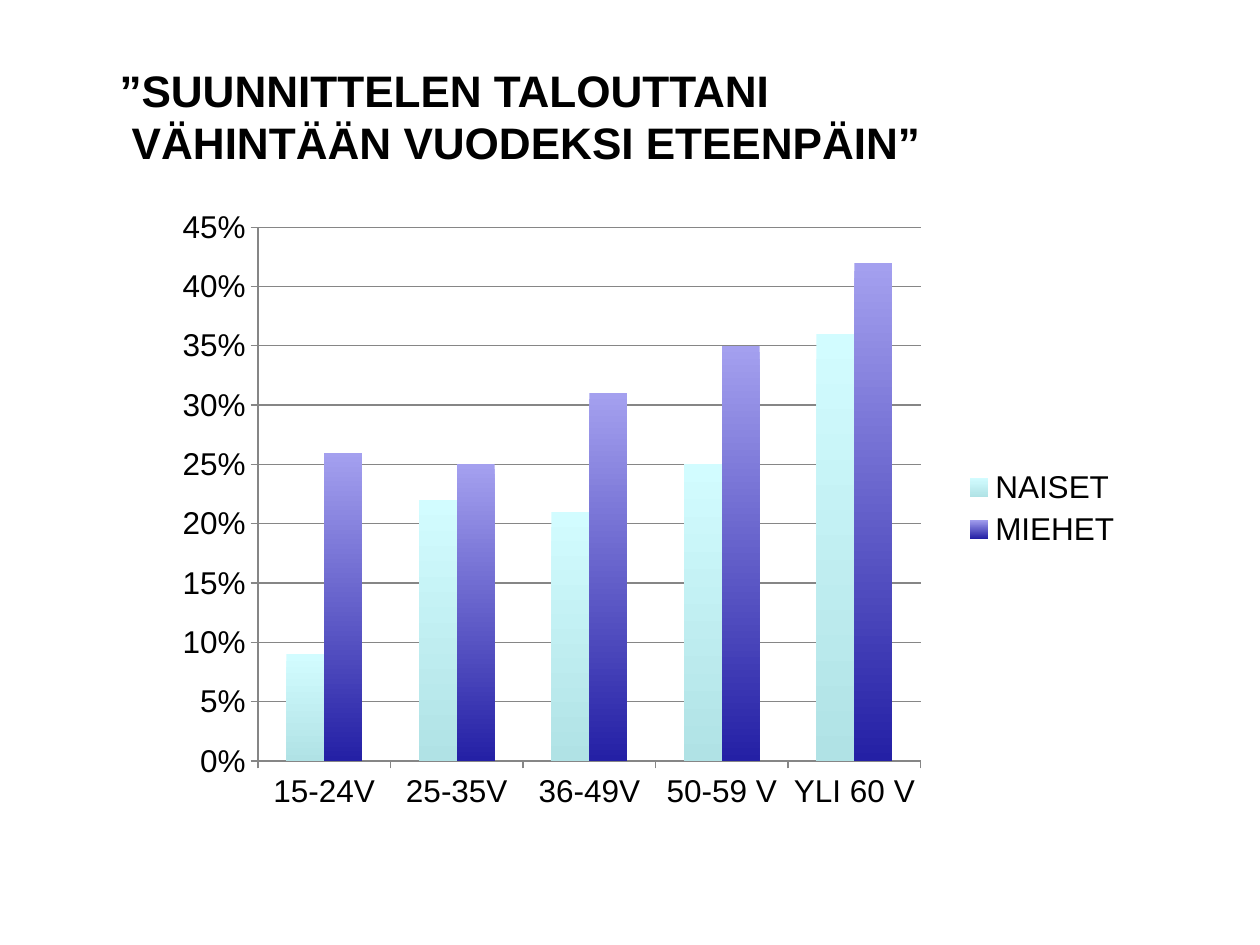
from lxml import etree
from pptx import Presentation
from pptx.chart.data import CategoryChartData as Data
from pptx.dml.color import RGBColor as Rgb
from pptx.enum.chart import XL_CHART_TYPE as Kind, XL_LEGEND_POSITION as Side, XL_TICK_MARK as Tick
from pptx.enum.text import MSO_ANCHOR as Anchor
from pptx.util import Inches, Pt

TITLE = ["”SUUNNITTELEN TALOUTTANI", " VÄHINTÄÄN VUODEKSI ETEENPÄIN”"]
AGES = ["15-24V", "25-35V", "36-49V", "50-59 V", "YLI 60 V"]
SERIES = [
    ("NAISET", (0.09, 0.22, 0.21, 0.25, 0.36), ("D2FCFF", "B0E2E5")),
    ("MIEHET", (0.26, 0.25, 0.31, 0.35, 0.42), ("A4A0EF", "2420A5")),
]
PLOT = {"x": 0.133, "y": 0.065, "w": 0.655, "h": 0.826}
GREY = "868686"
NS = "http://schemas.openxmlformats.org/drawingml/2006/chart"


def paint(color, code):
    color.rgb = Rgb.from_string(code)


def style(font, size):
    font.name = "Arial"
    font.size = Pt(size)
    paint(font.color, "000000")


def rule(line):
    line.width = Pt(0.75)
    paint(line.color, GREY)


def add_title(slide):
    box = slide.shapes.add_textbox(Inches(0.85), Inches(0.42), Inches(7.25), Inches(0.83))
    frame = box.text_frame
    frame.word_wrap = True
    frame.vertical_anchor = Anchor.TOP
    frame.margin_top = Inches(0.08)
    para = frame.paragraphs[0]
    for i, text in enumerate(TITLE):
        if i:
            para.add_line_break()
        run = para.add_run()
        run.text = text
        style(run.font, 25.2)
        run.font.bold = True


def place_plot(chart):
    area = chart._chartSpace.chart.plotArea
    for old in area.findall(f"{{{NS}}}layout"):
        area.remove(old)
    layout = etree.Element(f"{{{NS}}}layout")
    manual = etree.SubElement(layout, f"{{{NS}}}manualLayout")
    parts = {"layoutTarget": "inner", "xMode": "edge", "yMode": "edge", **PLOT}
    for tag, val in parts.items():
        etree.SubElement(manual, f"{{{NS}}}{tag}").set("val", str(val))
    area.insert(0, layout)


def add_bars(slide):
    data = Data(number_format="0%")
    data.categories = AGES
    for name, vals, _ in SERIES:
        data.add_series(name, vals)
    chart = slide.shapes.add_chart(
        Kind.COLUMN_CLUSTERED, Inches(0.98), Inches(1.47), Inches(8.03), Inches(5.13), data
    ).chart
    style(chart.font, 18)
    chart.has_title = False
    chart.has_legend = True
    chart.legend.position = Side.RIGHT
    chart.legend.include_in_layout = False
    plot = chart.plots[0]
    plot.gap_width = 150
    plot.overlap = 0
    plot.vary_by_categories = False
    for bars, (_, _, codes) in zip(plot.series, SERIES):
        fill = bars.format.fill
        fill.gradient()
        fill.gradient_angle = 270
        for stop, code, pos in zip(fill.gradient_stops, codes, (0, 1)):
            paint(stop.color, code)
            stop.position = pos
    for axis in (chart.category_axis, chart.value_axis):
        axis.major_tick_mark = Tick.OUTSIDE
        axis.minor_tick_mark = Tick.NONE
        rule(axis.format.line)
    axis = chart.value_axis
    axis.minimum_scale, axis.maximum_scale, axis.major_unit = 0, 0.45, 0.05
    axis.tick_labels.number_format = "0%"
    axis.tick_labels.number_format_is_linked = False
    axis.has_major_gridlines = True
    rule(axis.major_gridlines.format.line)
    place_plot(chart)


def main():
    deck = Presentation()
    deck.slide_width, deck.slide_height = Inches(10), Inches(7.5)
    slide = deck.slides.add_slide(deck.slide_layouts[6])
    add_bars(slide)
    add_title(slide)
    deck.save("out.pptx")


if __name__ == "__main__":
    main()
